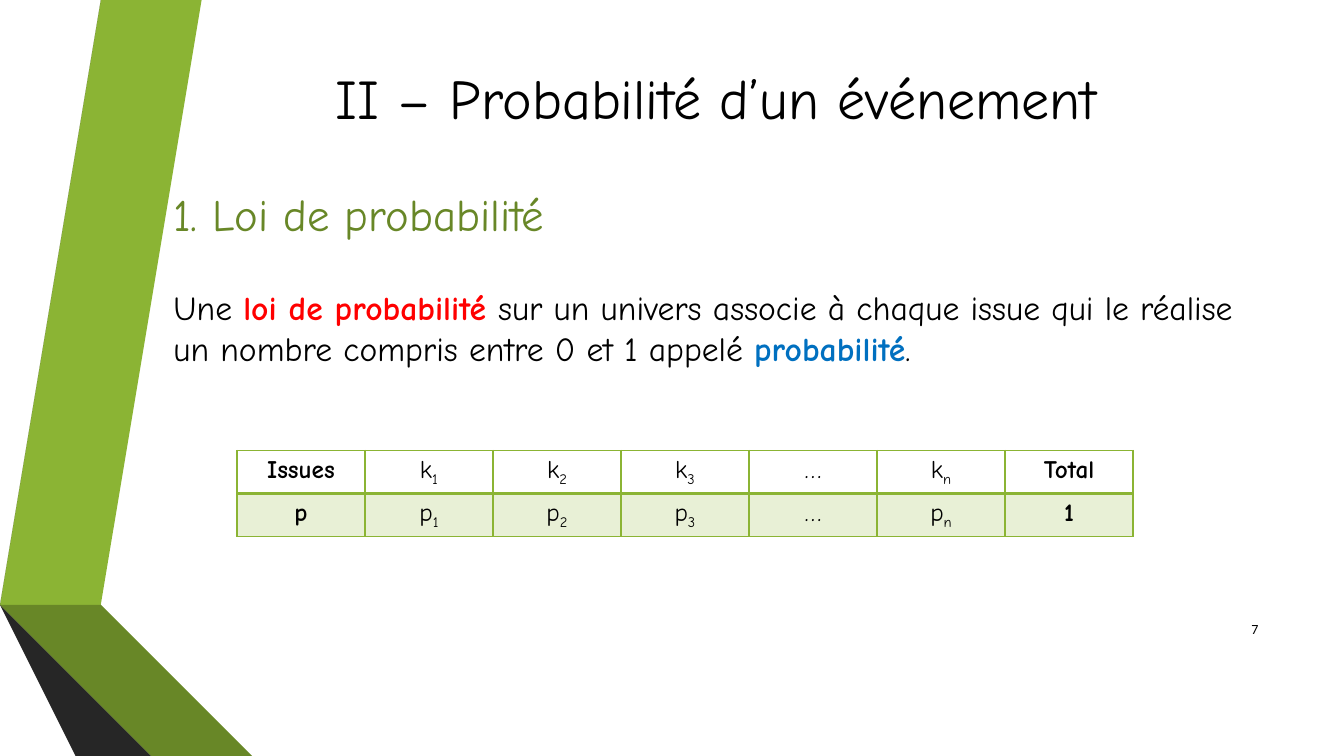
from lxml.etree import SubElement
from pptx import Presentation
from pptx.dml.color import RGBColor
from pptx.enum.text import MSO_ANCHOR, MSO_AUTO_SIZE, PP_ALIGN
from pptx.oxml.ns import qn
from pptx.util import Inches, Pt

BLACK = RGBColor(0x00, 0x00, 0x00)
RED = RGBColor(0xFF, 0x00, 0x00)
BLUE = RGBColor(0x00, 0x70, 0xC0)
WHITE = RGBColor(0xFF, 0xFF, 0xFF)
GREEN = RGBColor(0x8B, 0xB4, 0x34)
DARK_GREEN = RGBColor(0x68, 0x87, 0x27)
DEEP_GREEN = RGBColor(0x46, 0x5A, 0x1A)
PALE_GREEN = RGBColor(0xE8, 0xF0, 0xD6)
GREY = RGBColor(0x59, 0x59, 0x59)
DARK_GREY = RGBColor(0x40, 0x40, 0x40)
DEEP_GREY = RGBColor(0x26, 0x26, 0x26)
FONT = "Comic Neue"

TITLE = "II – Probabilité d’un événement"
HEADING = "1. Loi de probabilité"
DEFINITION = [
    ("Une ", BLACK, False),
    ("loi de probabilité ", RED, True),
    ("sur un univers associe à chaque issue qui le réalise un nombre compris entre 0 et 1 appelé ", BLACK, False),
    ("probabilité", BLUE, True),
    (".", BLACK, False),
]
PAGE = "7"
INDICES = ["1", "2", "3", "…", "n"]
TABLE_ROWS = [("Issues", "k", "Total", WHITE), ("p", "p", "1", PALE_GREEN)]
RIBBONS = [
    (GREEN, [(0.5, 5.78), (0.77, 5.83), (1.73, 0), (1.45, 0)]),
    (GREY, [(1.39, 0), (1.11, 0), (0.16, 5.73), (0.44, 5.77)]),
    (DEEP_GREY, [(0.16, 5.73), (1.45, 7.5), (1.51, 7.5)]),
    (DEEP_GREEN, [(0.5, 5.79), (2.08, 7.5), (2.14, 7.5)]),
    (DARK_GREEN, [(0.5, 5.79), (2.14, 7.5), (2.83, 7.5), (0.77, 5.83), (0.5, 5.78)]),
    (DARK_GREY, [(2.02, 7.5), (0.48, 5.83), (0.43, 5.78), (0.44, 5.77), (0.16, 5.73), (1.51, 7.5)]),
]
LEFT, WIDTH = 1.62, 10.96
COL_W, ROW_H = 1.27, 0.41


def place(shape, x, y, w, h):
    shape.left, shape.top = Inches(x), Inches(y)
    shape.width, shape.height = Inches(w), Inches(h)


def add_run(p, text, size, color=BLACK, bold=False, font=FONT):
    r = p.add_run()
    r.text = text
    r.font.size, r.font.name = Pt(size), font
    r.font.bold, r.font.color.rgb = bold, color
    return r


def write(shape, runs, size, align=PP_ALIGN.LEFT, anchor=MSO_ANCHOR.TOP, font=FONT):
    tf = shape.text_frame
    tf.word_wrap = True
    tf.auto_size = MSO_AUTO_SIZE.NONE
    tf.vertical_anchor = anchor
    p = tf.paragraphs[0]
    p.alignment, p.space_before = align, Pt(0)
    for text, color, bold in runs:
        add_run(p, text, size, color, bold, font)
    return p


def add_border(cell, side, points):
    ln = SubElement(cell._tc.get_or_add_tcPr(), qn(f"a:ln{side}"), w=str(Pt(points)))
    fill = SubElement(ln, qn("a:solidFill"))
    SubElement(fill, qn("a:srgbClr"), val=str(GREEN))


def add_ribbons(s):
    for color, points in RIBBONS:
        builder = s.shapes.build_freeform(*points[0], scale=Inches(1))
        builder.add_line_segments(points[1:], close=True)
        ribbon = builder.convert_to_shape()
        ribbon.shadow.inherit = False
        ribbon.fill.solid()
        ribbon.fill.fore_color.rgb = color
        ribbon.line.fill.background()


def add_law_table(s):
    cols = len(INDICES) + 2
    frame = s.shapes.add_table(len(TABLE_ROWS), cols, Inches(2.35), Inches(4.47),
                               Inches(COL_W * cols), Inches(ROW_H * len(TABLE_ROWS)))
    table = frame.table
    for col in table.columns:
        col.width = Inches(COL_W)
    for i, (label, symbol, total, color) in enumerate(TABLE_ROWS):
        table.rows[i].height = Inches(ROW_H)
        middle = [("…", "") if n == "…" else (symbol, n) for n in INDICES]
        for j, (text, index) in enumerate([(label, ""), *middle, (total, "")]):
            cell = table.cell(i, j)
            p = cell.text_frame.paragraphs[0]
            p.alignment = PP_ALIGN.CENTER
            add_run(p, text, 18, bold=j in (0, cols - 1))
            if index:
                r = add_run(p, index, 18)
                r._r.get_or_add_rPr().set("baseline", "-25000")
            for side in "LRTB":
                add_border(cell, side, 2 if i == 0 and side == "B" else 1)
            cell.fill.solid()
            cell.fill.fore_color.rgb = color


def main():
    prs = Presentation()
    prs.slide_width, prs.slide_height = Inches(13.33), Inches(7.5)
    s = prs.slides.add_slide(prs.slide_layouts[1])
    add_ribbons(s)

    title = s.shapes.title
    place(title, LEFT, 0, WIDTH, 1.92)
    write(title, [(TITLE, BLACK, False)], 40, PP_ALIGN.CENTER, MSO_ANCHOR.MIDDLE)

    body = s.placeholders[1]
    place(body, LEFT, 2.8, WIDTH, 0.91)
    pPr = write(body, DEFINITION, 24)._p.get_or_add_pPr()
    pPr.set("marL", "0")
    pPr.set("indent", "0")
    SubElement(pPr, qn("a:buNone"))

    heading = s.shapes.add_textbox(Inches(LEFT), Inches(1.8), Inches(WIDTH), Inches(0.64))
    write(heading, [(HEADING, DARK_GREEN, False)], 32)

    page = s.shapes.add_textbox(Inches(11.98), Inches(6.04), Inches(0.6), Inches(0.4))
    write(page, [(PAGE, BLACK, False)], 10, PP_ALIGN.RIGHT, MSO_ANCHOR.MIDDLE, "Calibri")

    add_law_table(s)
    prs.save("out.pptx")


if __name__ == "__main__":
    main()
